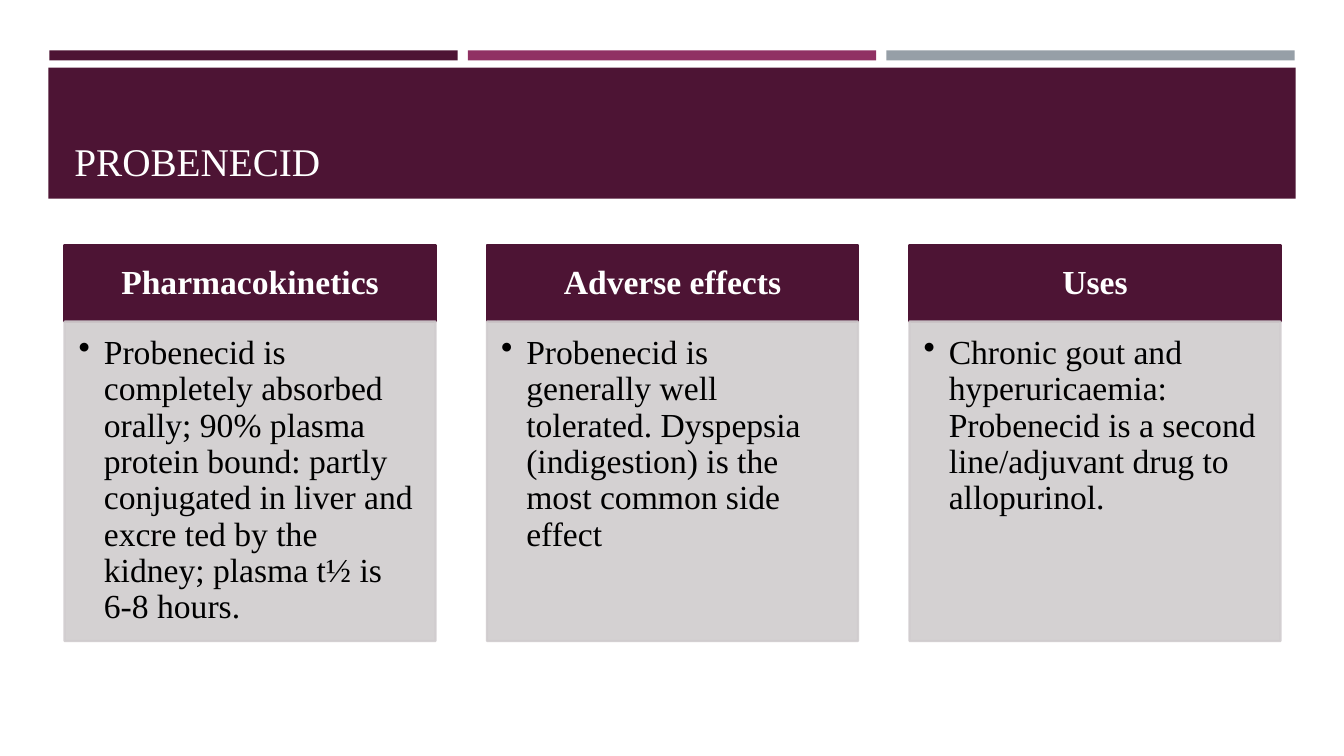
from lxml import etree
from pptx import Presentation
from pptx.dml.color import RGBColor
from pptx.enum import shapes, text
from pptx.oxml import ns
from pptx.util import Inches, Pt

PLUM = RGBColor(0x4D, 0x14, 0x34)
ROSE = RGBColor(0x90, 0x31, 0x63)
SLATE = RGBColor(0x96, 0x9F, 0xA7)
GREY = RGBColor(0xD0, 0xCC, 0xCE)
WHITE = RGBColor(0xFF, 0xFF, 0xFF)
BLACK = RGBColor(0, 0, 0)

COLUMNS = [
    ("Pharmacokinetics",
     "Probenecid is completely absorbed orally; 90% plasma protein bound: partly "
     "conjugated in liver and excre ted by the kidney; plasma t½ is 6-8 hours."),
    ("Adverse effects",
     "Probenecid is generally well tolerated. Dyspepsia (indigestion) is the "
     "most common side effect"),
    ("Uses",
     "Chronic gout and hyperuricaemia: Probenecid is a second line/adjuvant "
     "drug to allopurinol."),
]

deck = Presentation()
deck.slide_width, deck.slide_height = Inches(13.33), Inches(7.5)
slide = deck.slides.add_slide(deck.slide_layouts[6])


def block(left, top, width, height, fill, edge=False):
    """Add a flat rectangle, in inches, edged in its own colour if asked."""
    rect = slide.shapes.add_shape(
        shapes.MSO_SHAPE.RECTANGLE, *map(Inches, (left, top, width, height)))
    rect.shadow.inherit = False
    rect.fill.solid()
    rect.fill.fore_color.rgb = fill
    if edge:
        rect.line.color.rgb = fill
        rect.line.width = Pt(1.5)
    else:
        rect.line.fill.background()
    return rect


def write(shape, words, size, color, anchor, align, insets):
    """Fill a shape with one paragraph; insets run left, top, right, bottom."""
    frame = shape.text_frame
    frame.word_wrap = True
    frame.vertical_anchor = anchor
    (frame.margin_left, frame.margin_top,
     frame.margin_right, frame.margin_bottom) = map(Inches, insets)
    para = frame.paragraphs[0]
    para.text = words
    para.alignment = align
    para.line_spacing = 0.9
    para.font.name = "Times New Roman"
    para.font.size = Pt(size)
    para.font.color.rgb = color
    return para


# Banner
for col, tint in enumerate((PLUM, ROSE, SLATE)):
    block(0.49 + col * 4.15, 0.5, 4.05, 0.1, tint)
block(0.48, 0.67, 12.37, 1.3, PLUM)
title = slide.shapes.add_textbox(*map(Inches, (0.64, 0.77, 12.06, 1.11)))
write(title, "PROBENECID", 28, WHITE, text.MSO_ANCHOR.BOTTOM,
      text.PP_ALIGN.LEFT, (0.1, 0.05, 0.1, 0.05))

# Columns
for col, (name, detail) in enumerate(COLUMNS):
    left = 0.64 + col * 4.19
    head = block(left, 2.43, 3.68, 0.76, PLUM, edge=True)
    para = write(head, name, 24, WHITE, text.MSO_ANCHOR.MIDDLE,
                 text.PP_ALIGN.CENTER, (0.19, 0.11, 0.19, 0.11))
    para.font.bold = True

    body = block(left, 3.19, 3.68, 3.17, GREY, edge=True)
    for color in body._element.spPr.iter(ns.qn("a:srgbClr")):
        etree.SubElement(color, ns.qn("a:alpha"), val="90000")
    para = write(body, detail, 24, BLACK, text.MSO_ANCHOR.TOP,
                 text.PP_ALIGN.LEFT, (0.14, 0.14, 0.19, 0.21))
    props = para._p.get_or_add_pPr()
    props.set("marL", str(Inches(0.25)))
    props.set("indent", str(Inches(-0.25)))
    bullet = etree.Element(ns.qn("a:buChar"), char="•")
    props.find(ns.qn("a:defRPr")).addprevious(bullet)

deck.save("out.pptx")
